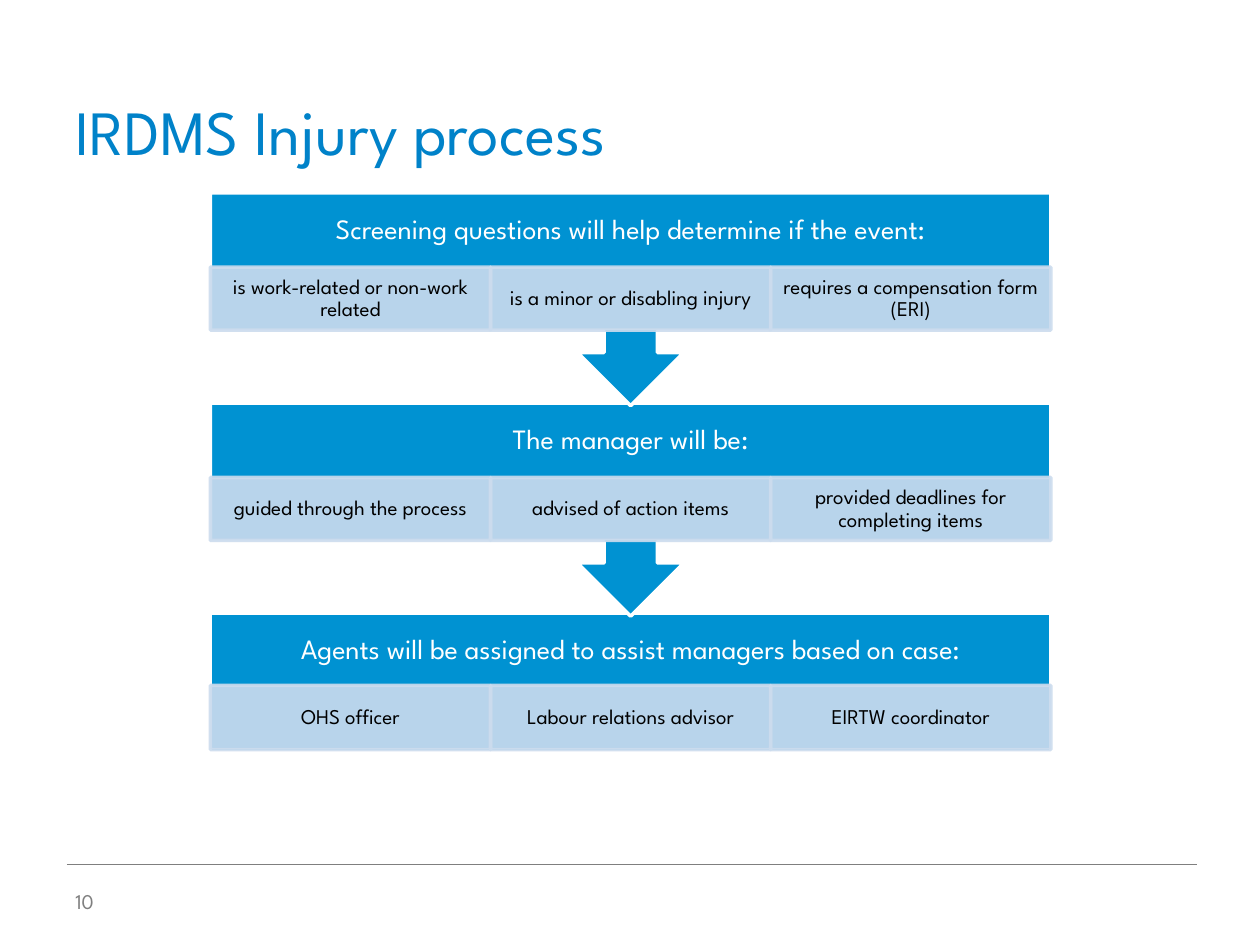
import pptx
import pptx.util
import pptx.dml.color
import pptx.enum.shapes
import pptx.enum.text
import pptx.oxml.ns
import lxml.etree

Inches = pptx.util.Inches
SHAPE = pptx.enum.shapes.MSO_SHAPE
ANCHOR = pptx.enum.text.MSO_ANCHOR
ALIGN = pptx.enum.text.PP_ALIGN
qn = pptx.oxml.ns.qn


def paint(target, color, alpha=None):
    target.solid()
    target.fore_color.rgb = pptx.dml.color.RGBColor.from_string(color)
    if alpha:
        for clr in target._xPr.iterfind(qn("a:solidFill") + "/" + qn("a:srgbClr")):
            lxml.etree.SubElement(clr, qn("a:alpha")).set("val", str(alpha * 1000))


def write(sp, text, size, color, anchor, align=ALIGN.LEFT, inset=(0.1, 0.05), spacing=1.0):
    tf = sp.text_frame
    tf.text = text
    tf.word_wrap = True
    tf.vertical_anchor = anchor
    tf.margin_left = tf.margin_right = Inches(inset[0])
    tf.margin_top = tf.margin_bottom = Inches(inset[1])
    p = tf.paragraphs[0]
    p.alignment = align
    p.line_spacing = spacing
    r = p.runs[0]
    r.font.name = "League Spartan"
    r.font.size = pptx.util.Pt(size)
    paint(r.font.fill, color)


prs = pptx.Presentation()
prs.slide_width = Inches(10)
prs.slide_height = Inches(7.5)
s = prs.slides.add_slide(prs.slide_layouts[6])

rule = s.shapes.add_connector(pptx.enum.shapes.MSO_CONNECTOR.STRAIGHT,
                              Inches(0.53), Inches(6.86), Inches(9.5), Inches(6.86))
paint(rule.line.fill, "7F7F7F")
rule.line.width = pptx.util.Pt(0.25)
lxml.etree.SubElement(rule._element.spPr, qn("a:effectLst"))

title = s.shapes.add_textbox(Inches(0.5), Inches(0.3), Inches(9), Inches(1.08))
write(title, "IRDMS Injury process", 36, "0082C9", ANCHOR.BOTTOM)
number = s.shapes.add_textbox(Inches(0.5), Inches(6.95), Inches(1.07), Inches(0.4))
write(number, "10", 12, "7F7F7F", ANCHOR.MIDDLE)

left, width, header_height = 1.67, 6.67, 0.59
cell_width = width / 3
stages = [
    (4.87, 1.1, SHAPE.RECTANGLE, 0, 5.44, 0.51,
     "Agents will be assigned to assist managers based on case:",
     ["OHS officer", "Labour relations advisor", "EIRTW coordinator"]),
    (3.2, 1.69, SHAPE.UP_ARROW_CALLOUT, 180, 3.79, 0.5,
     "The manager will be:",
     ["guided through the process", "advised of action items",
      "provided deadlines for completing items"]),
    (1.53, 1.69, SHAPE.UP_ARROW_CALLOUT, 180, 2.12, 0.5,
     "Screening questions will help determine if the event:",
     ["is work-related or non-work related", "is a minor or disabling injury",
      "requires a compensation form (ERI)"]),
]

for top, height, kind, rotation, cell_top, cell_height, heading, items in stages:
    sp = s.shapes.add_shape(kind, Inches(left), Inches(top), Inches(width), Inches(height))
    sp.rotation = rotation
    sp.shadow.inherit = False
    paint(sp.fill, "0092D2")
    paint(sp.line.fill, "FFFFFF")
    sp.line.width = pptx.util.Pt(2)

    header = s.shapes.add_textbox(Inches(left), Inches(top), Inches(width), Inches(header_height))
    write(header, heading, 16, "FFFFFF", ANCHOR.MIDDLE, ALIGN.CENTER, (0.12, 0.12), 0.9)

    for i, item in enumerate(items):
        cell = s.shapes.add_shape(SHAPE.RECTANGLE, Inches(left + i * cell_width), Inches(cell_top),
                                  Inches(cell_width), Inches(cell_height))
        cell.shadow.inherit = False
        paint(cell.fill, "CCDCEE")
        paint(cell.line.fill, "CCDCEE")
        cell.line.width = pptx.util.Pt(2)
        for clr in cell._element.spPr.iter(qn("a:srgbClr")):
            lxml.etree.SubElement(clr, qn("a:alpha")).set("val", "90000")
        write(cell, item, 12, "000000", ANCHOR.MIDDLE, ALIGN.CENTER, (0.09, 0.02), 0.9)

prs.save("out.pptx")
